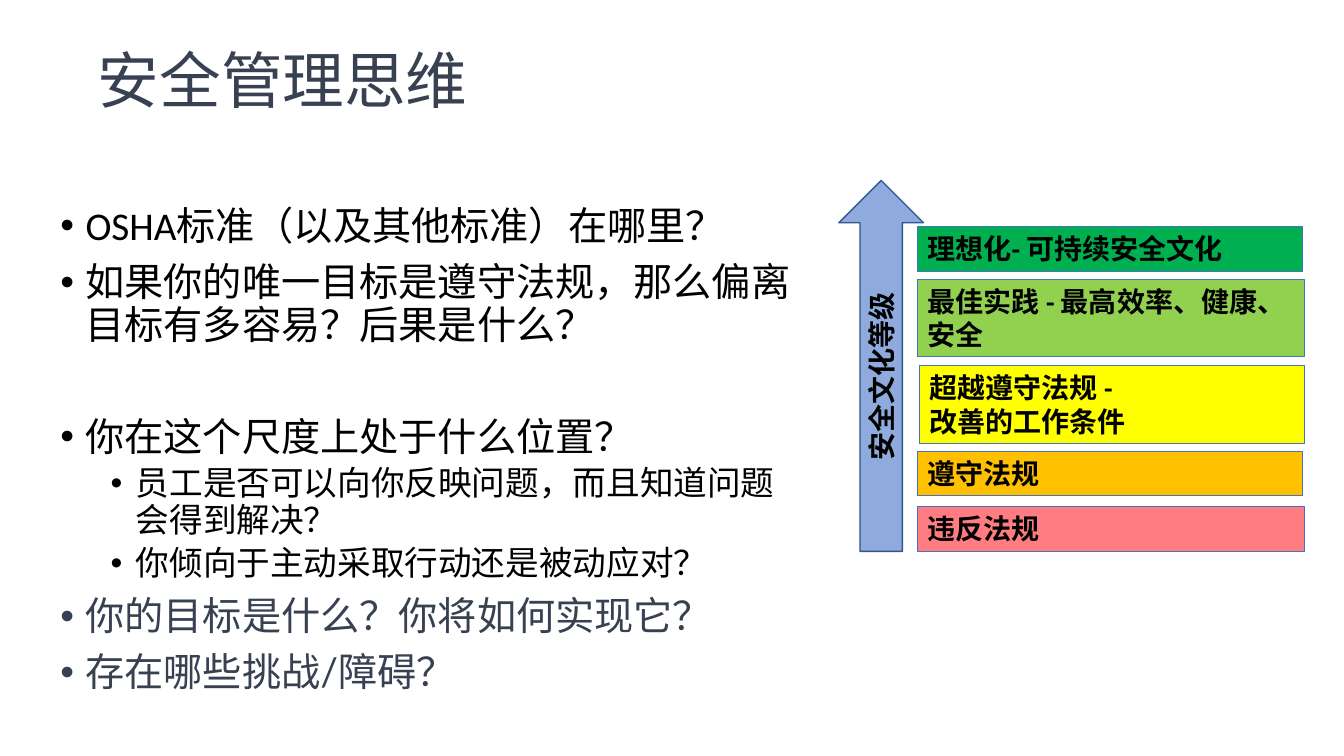
from dataclasses import dataclass

from lxml import etree
from pptx import Presentation
from pptx.dml.color import RGBColor
from pptx.enum.shapes import MSO_SHAPE
from pptx.enum.text import MSO_ANCHOR, MSO_AUTO_SIZE, PP_ALIGN
from pptx.oxml.ns import qn
from pptx.util import Inches, Pt

RECTANGLE, UP_ARROW = MSO_SHAPE.RECTANGLE, MSO_SHAPE.UP_ARROW
LEFT, CENTER = PP_ALIGN.LEFT, PP_ALIGN.CENTER
TOP, MIDDLE = MSO_ANCHOR.TOP, MSO_ANCHOR.MIDDLE
GROW = MSO_AUTO_SIZE.SHAPE_TO_FIT_TEXT


@dataclass(frozen=True)
class Theme:
    heading_font: str = "Lato"
    body_font: str = "Calibri"
    slate: str = "374151"
    black: str = "000000"
    box_line: str = "4472C4"
    arrow_fill: str = "8FAADC"
    arrow_line: str = "325491"
    title_size: int = 44
    bullet_sizes: tuple = (28, 24)
    label_size: int = 20


THEME = Theme()

# Content
TITLE = "安全管理思维"
PLAIN = (THEME.body_font, THEME.black)
ACCENT = (THEME.heading_font, THEME.slate)
# text, level, space before in points, (font, colour)
QUESTIONS = [
    ("OSHA标准（以及其他标准）在哪里？", 0, 10, PLAIN),
    ("如果你的唯一目标是遵守法规，那么偏离目标有多容易？后果是什么？", 0, 10, PLAIN),
    ("你在这个尺度上处于什么位置？", 0, 50, PLAIN),
    ("员工是否可以向你反映问题，而且知道问题会得到解决？", 1, 5, PLAIN),
    ("你倾向于主动采取行动还是被动应对？", 1, 5, PLAIN),
    ("你的目标是什么？你将如何实现它？", 0, 10, ACCENT),
    ("存在哪些挑战/障碍？", 0, 10, ACCENT),
]
ARROW_LABEL = "安全文化等级"
# lines, fill, left, top, width; lowest level first
LEVELS = [
    (["违反法规"], "FF7C80", 9.1, 5.03, 3.84),
    (["遵守法规"], "FFC000", 9.1, 4.48, 3.82),
    (["超越遵守法规 -", "改善的工作条件"], "FFFF00", 9.12, 3.63, 3.82),
    (["最佳实践 - 最高效率、健康、安全"], "92D050", 9.1, 2.77, 3.84),
    (["理想化- 可持续安全文化"], "00B050", 9.1, 2.25, 3.82),
]
ONE_LINE, TWO_LINES = 0.44, 0.77
CHARACTERS_PER_LINE = 15


def add_run(paragraph, text, size, font, color, bold=False):
    run = paragraph.add_run()
    run.text = text
    run.font.size = Pt(size)
    run.font.name = font
    run.font.bold = bold
    run.font.color.rgb = RGBColor.from_string(color)


def add_bullet(paragraph, level):
    properties = paragraph._p.get_or_add_pPr()
    properties.set("marL", str(Inches(0.25 + 0.5 * level)))
    properties.set("indent", str(Inches(-0.25)))
    etree.SubElement(properties, qn("a:buFont")).set("typeface", "Arial")
    etree.SubElement(properties, qn("a:buChar")).set("char", "•")


def add_label_shape(shapes, kind, box, fill, line, line_width, lines, align, anchor):
    shape = shapes.add_shape(kind, *(Inches(value) for value in box))
    shape.shadow.inherit = False
    shape.fill.solid()
    shape.fill.fore_color.rgb = RGBColor.from_string(fill)
    shape.line.color.rgb = RGBColor.from_string(line)
    shape.line.width = Pt(line_width)
    frame = shape.text_frame
    frame.word_wrap = True
    frame.vertical_anchor = anchor
    for index, text in enumerate(lines):
        paragraph = frame.add_paragraph() if index else frame.paragraphs[0]
        paragraph.alignment = align
        add_run(paragraph, text, THEME.label_size, *PLAIN, bold=True)
    return shape


def main():
    presentation = Presentation()
    presentation.slide_width = Inches(13.33)
    presentation.slide_height = Inches(7.5)
    slide = presentation.slides.add_slide(presentation.slide_layouts[5])

    # Title
    title = slide.shapes.title
    title.left, title.top = Inches(0.87), Inches(0.1)
    title.width, title.height = Inches(11.5), Inches(1.45)
    title.text_frame.vertical_anchor = MIDDLE
    paragraph = title.text_frame.paragraphs[0]
    paragraph.alignment = LEFT
    paragraph.line_spacing = 0.9
    add_run(paragraph, TITLE, THEME.title_size, *ACCENT)

    # Questions
    body = slide.shapes.add_textbox(Inches(0.5), Inches(2), Inches(7.6), Inches(5.41))
    frame = body.text_frame
    frame.word_wrap = True
    for index, (text, level, space, style) in enumerate(QUESTIONS):
        paragraph = frame.add_paragraph() if index else frame.paragraphs[0]
        paragraph.level = level
        paragraph.line_spacing = 0.9
        paragraph.space_before = Pt(space)
        add_bullet(paragraph, level)
        add_run(paragraph, text, THEME.bullet_sizes[level], *style)

    # Safety culture levels
    scale = slide.shapes.add_group_shape().shapes
    for lines, fill, left, top, width in LEVELS:
        wraps = len(lines) > 1 or len(lines[0]) > CHARACTERS_PER_LINE
        box = (left, top, width, TWO_LINES if wraps else ONE_LINE)
        shape = add_label_shape(scale, RECTANGLE, box, fill, THEME.box_line, 0.75,
                                lines, LEFT, TOP)
        shape.text_frame.auto_size = GROW

    # Upward arrow
    arrow = add_label_shape(scale, UP_ARROW, (8.32, 1.79, 0.84, 3.68), THEME.arrow_fill,
                            THEME.arrow_line, 1, [ARROW_LABEL], CENTER, MIDDLE)
    arrow.text_frame._txBody.bodyPr.set("vert", "vert270")

    presentation.save("out.pptx")


if __name__ == "__main__":
    main()
